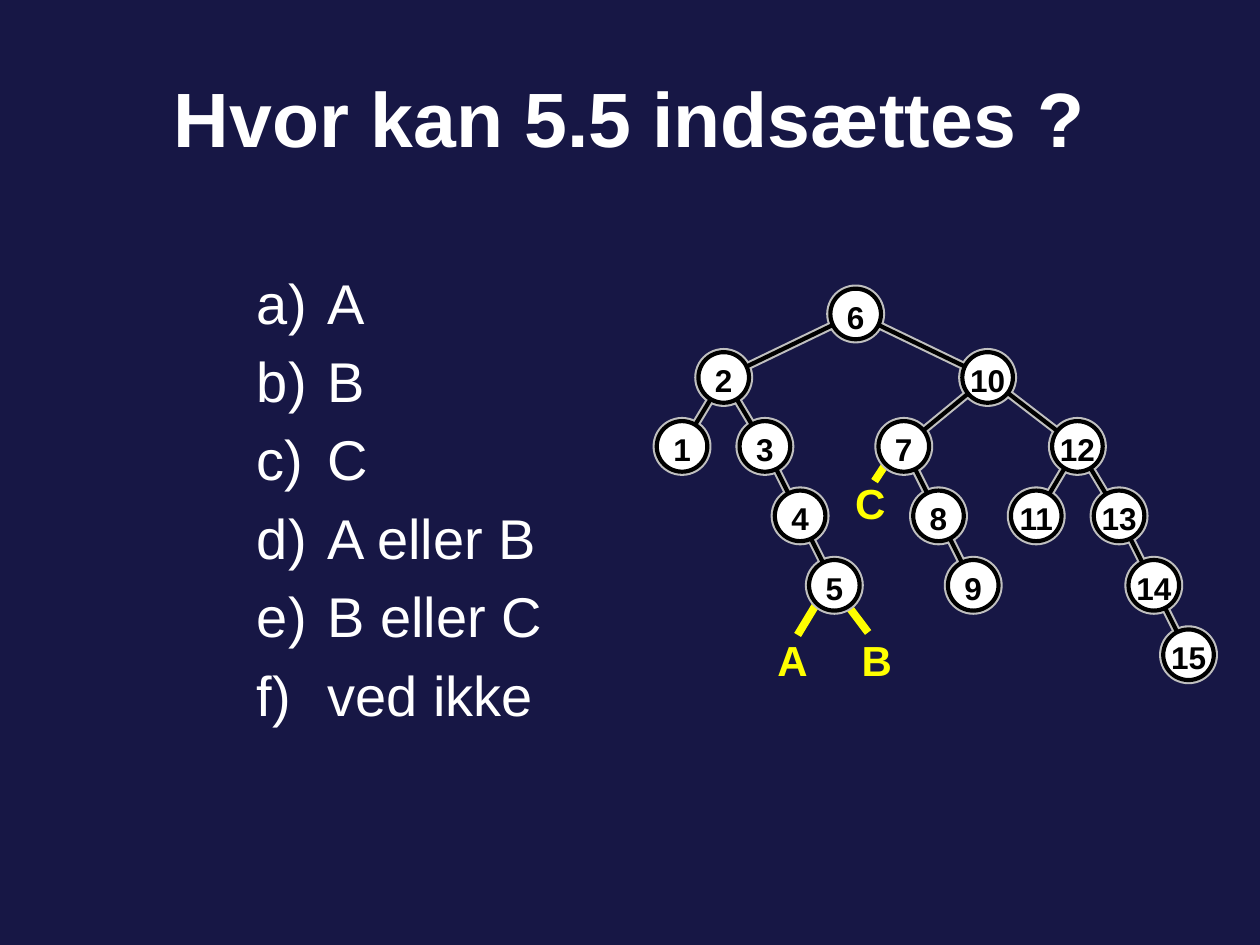
"""Build a slide asking where 5.5 can be inserted in a binary search tree."""
from lxml import etree
from pptx import Presentation
from pptx import util as u
from pptx.dml.color import RGBColor
from pptx.enum import shapes, text
from pptx.oxml.ns import qn

COLORS = {"background": "171745", "white": "FFFFFF", "yellow": "FFFF00",
          "gray": "C0C0C0", "black": "000000"}


def write(tf, lines, size=18, color="white", bold=True, align="CENTER",
          before=0, numbering=None, indent=0):
    for i, line in enumerate(lines):
        p = tf.paragraphs[0] if i == 0 else tf.add_paragraph()
        p.alignment = getattr(text.PP_ALIGN, align)
        pPr = p._p.get_or_add_pPr()
        if before:
            spacing = etree.SubElement(pPr, qn("a:spcBef"))
            etree.SubElement(spacing, qn("a:spcPct")).set("val", str(before * 1000))
        if numbering:
            pPr.set("marL", str(u.Cm(indent)))
            pPr.set("indent", str(-u.Cm(indent)))
            etree.SubElement(pPr, qn("a:buAutoNum")).set("type", numbering)
        r = p.add_run()
        r.text = line
        r.font.name = "Arial"
        r.font.size = u.Pt(size)
        r.font.bold = bold
        r.font.color.rgb = RGBColor.from_string(COLORS[color])


def connect(s, x1, y1, x2, y2, color, width):
    c = s.shapes.add_connector(shapes.MSO_CONNECTOR.STRAIGHT,
                               u.Cm(x1), u.Cm(y1), u.Cm(x2), u.Cm(y2))
    c.line.color.rgb = RGBColor.from_string(COLORS[color])
    c.line.width = u.Pt(width)
    etree.SubElement(c._element.spPr, qn("a:effectLst"))


prs = Presentation()
prs.slide_width, prs.slide_height = u.Cm(25.4), u.Cm(19.05)
s = prs.slides.add_slide(prs.slide_layouts[6])
s.background.fill.solid()
s.background.fill.fore_color.rgb = RGBColor.from_string(COLORS["background"])

title = s.shapes.add_textbox(u.Cm(0), u.Cm(0.76), u.Cm(25.4), u.Cm(3.18))
title.text_frame.word_wrap = True
title.text_frame.vertical_anchor = text.MSO_ANCHOR.MIDDLE
write(title.text_frame, ["Hvor kan 5.5 indsættes ?"], size=44)

answers = s.shapes.add_textbox(u.Cm(4.93), u.Cm(5.28), u.Cm(9.88), u.Cm(12.06))
answers.text_frame.word_wrap = True
write(answers.text_frame, ["A", "B", "C", "A eller B", "B eller C", "ved ikke"],
      size=32, bold=False, align="LEFT", before=20,
      numbering="alphaLcParenR", indent=1.42)

candidates = {"A": (15.24, 12.67, 16.46, 12.17, 16.08, 12.8),
              "B": (16.94, 12.67, 17.04, 12.14, 17.5, 12.75),
              "C": (16.81, 9.5, 17.86, 9.35, 17.63, 9.7)}
for letter, (left, top, *ends) in candidates.items():
    tb = s.shapes.add_textbox(u.Cm(left), u.Cm(top), u.Cm(1.47), u.Cm(1.3))
    tb.text_frame.word_wrap = True
    write(tb.text_frame, [letter], size=24, color="yellow", before=50)
    connect(s, *ends, "yellow", 4.5)

levels = [(6.33, {6: 17.25}),
          (7.61, {2: 14.59, 10: 19.91}),
          (9.0, {1: 13.75, 3: 15.42, 7: 18.22, 12: 21.72}),
          (10.4, {4: 16.13, 8: 18.92, 11: 20.89, 13: 22.56}),
          (11.8, {5: 16.82, 9: 19.62, 14: 23.26}),
          (13.2, {15: 23.96})]
nodes = {key: (x, y) for y, row in levels for key, x in row.items()}
edges = [(6, 2), (6, 10), (2, 1), (2, 3), (10, 7), (10, 12), (3, 5),
         (7, 9), (12, 11), (12, 13), (13, 15)]
diameter = 1.02

for fill, line, width in [("gray", "gray", 4.75), ("white", "black", 2.38)]:
    for start, end in edges:
        connect(s, *nodes[start], *nodes[end], line, width)
    for key, (x, y) in nodes.items():
        sp = s.shapes.add_shape(shapes.MSO_SHAPE.OVAL,
                                u.Cm(x - diameter / 2), u.Cm(y - diameter / 2),
                                u.Cm(diameter), u.Cm(diameter))
        sp.shadow.inherit = False
        sp.fill.solid()
        sp.fill.fore_color.rgb = RGBColor.from_string(COLORS[fill])
        sp.line.color.rgb = RGBColor.from_string(COLORS[line])
        sp.line.width = u.Pt(width)
        if fill == "white":
            tf = sp.text_frame
            tf.word_wrap = False
            tf.vertical_anchor = text.MSO_ANCHOR.MIDDLE
            tf.margin_left = tf.margin_right = tf.margin_bottom = 0
            tf.margin_top = u.Cm(0.1)
            write(tf, [str(key)], color="black")

prs.save("out.pptx")
